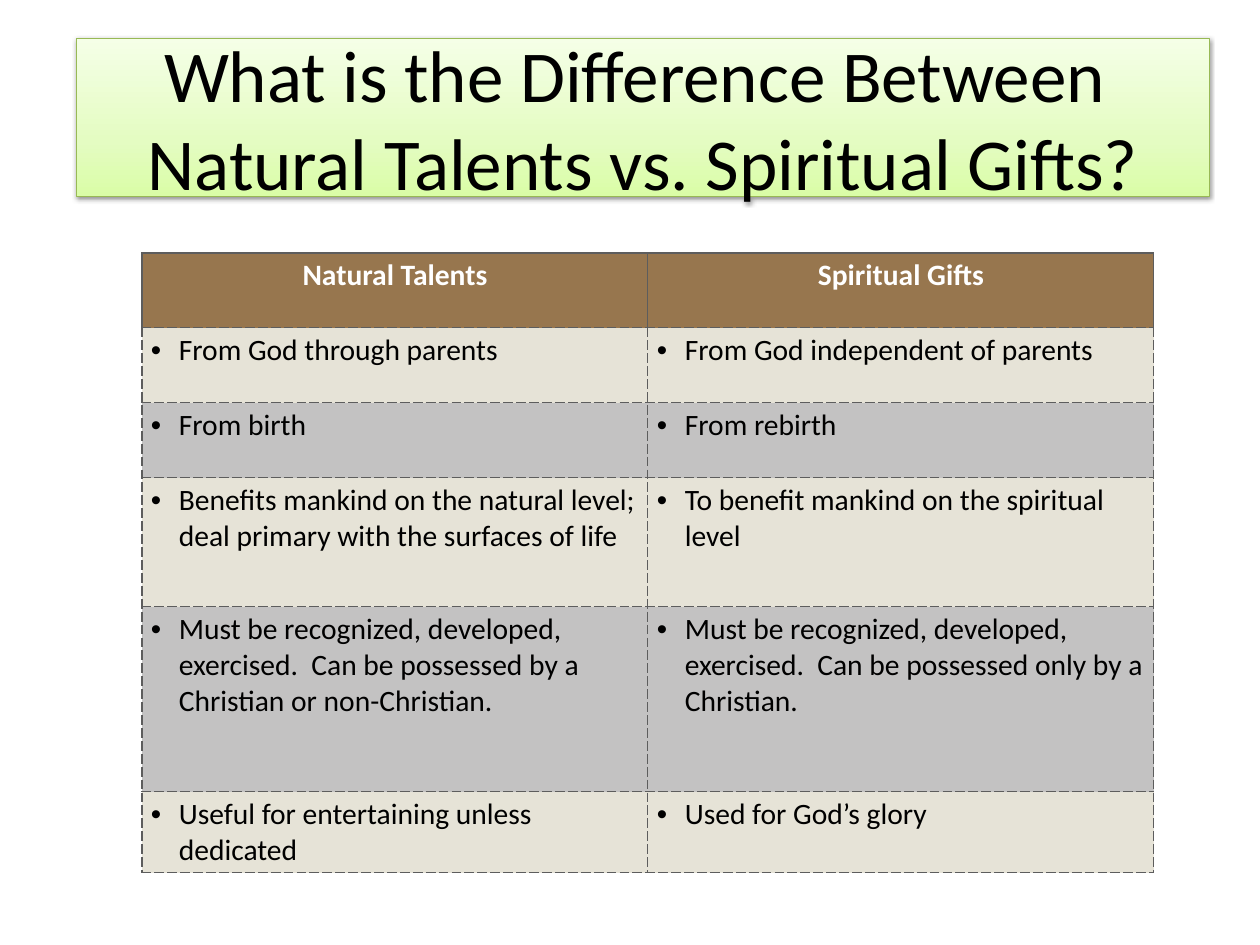
from lxml import etree
from pptx import Presentation
from pptx import util as u
from pptx.dml.color import RGBColor
from pptx.enum import text
from pptx.oxml import parse_xml
from pptx.oxml.ns import nsdecls, qn

EMU_PER_PX = 10321
SLIDE_SIZE = 1260, 945

BLACK = RGBColor(0x00, 0x00, 0x00)
WHITE = RGBColor(0xFF, 0xFF, 0xFF)
LEAF = RGBColor(0x98, 0xB9, 0x55)
BROWN = RGBColor(0x97, 0x76, 0x4E)
SAND = RGBColor(0xE6, 0xE3, 0xD7)
SILVER = RGBColor(0xC3, 0xC2, 0xC2)
BORDER = RGBColor(0x5D, 0x5D, 0x5D)
TITLE_STOPS = [
    (0, RGBColor(0xDA, 0xFD, 0xA7)),
    (35, RGBColor(0xE4, 0xFC, 0xC2)),
    (100, RGBColor(0xF5, 0xFF, 0xE7)),
]

TITLE = "What is the Difference Between \vNatural Talents vs. Spiritual Gifts?"
HEADINGS = "Natural Talents", "Spiritual Gifts"
COMPARISONS = [
    ("From God through parents", "From God independent of parents"),
    ("From birth", "From rebirth"),
    ("Benefits mankind on the natural level; deal primary with the surfaces of life",
     "To benefit mankind on the spiritual level"),
    ("Must be recognized, developed, exercised.  Can be possessed by a "
     "Christian or non-Christian.",
     "Must be recognized, developed, exercised.  Can be possessed only by a Christian."),
    ("Useful for entertaining unless dedicated", "Used for God’s glory"),
]
ROW_HEIGHTS = 75, 75, 75, 129, 185, 81

TITLE_FONT = {"name": "Calibri", "size": u.Pt(59.4), "bold": False}
HEADING_FONT = {"name": "Calibri", "size": u.Pt(24), "bold": True}
BODY_FONT = {**HEADING_FONT, "bold": False}


def px(n):
    return u.Emu(n * EMU_PER_PX)


class Deck:
    """Holds the presentation, its style helpers and the current slide."""

    def __init__(self):
        self.prs = Presentation()
        self.prs.slide_width, self.prs.slide_height = map(px, SLIDE_SIZE)
        self.s = self.prs.slides.add_slide(self.prs.slide_layouts[5])

    def set_text(self, tf, words, font, color, align):
        tf.word_wrap = True
        tf.text = words
        p = tf.paragraphs[0]
        p.alignment = align
        for r in p.runs:
            for key, value in font.items():
                setattr(r.font, key, value)
            r.font.color.rgb = color
        return p

    def title(self, words, left, top, width, height):
        sp = self.s.shapes.title
        sp.left, sp.top, sp.width, sp.height = map(px, (left, top, width, height))
        self.set_text(sp.text_frame, words, TITLE_FONT, BLACK, text.PP_ALIGN.CENTER)
        sp.text_frame.auto_size = text.MSO_AUTO_SIZE.NONE
        sp.text_frame.vertical_anchor = text.MSO_ANCHOR.MIDDLE
        stops = "".join(
            f'<a:gs pos="{pos * 1000}"><a:srgbClr val="{color}"/></a:gs>'
            for pos, color in TITLE_STOPS)
        sp._element.spPr.append(parse_xml(
            f'<a:gradFill {nsdecls("a")} rotWithShape="1"><a:gsLst>{stops}</a:gsLst>'
            '<a:lin ang="16200000" scaled="0"/></a:gradFill>'))
        sp.line.color.rgb = LEAF
        sp.line.width = u.Pt(0.75)
        sp._element.spPr.append(parse_xml(
            f'<a:effectLst {nsdecls("a")}><a:outerShdw blurRad="{u.Pt(3.1)}" '
            f'dist="{u.Pt(1.6)}" dir="5400000" rotWithShape="0"><a:srgbClr val="{BLACK}">'
            '<a:alpha val="38000"/></a:srgbClr></a:outerShdw></a:effectLst>'))

    def bullet(self, p):
        """Give the paragraph a hanging round bullet."""
        pPr = p._p.get_or_add_pPr()
        pPr.set("marL", str(px(28)))
        pPr.set("indent", str(-px(28)))
        etree.SubElement(pPr, qn("a:buFont")).set("typeface", "Arial")
        etree.SubElement(pPr, qn("a:buChar")).set("char", "•")

    def borders(self, cell, dashes):
        """Draw the left, right, top and bottom sides in the given dashes."""
        tcPr = cell._tc.get_or_add_tcPr()
        for side, dash in zip("LRTB", dashes):
            tcPr.append(parse_xml(
                f'<a:ln{side} {nsdecls("a")} w="{u.Pt(1)}"><a:solidFill>'
                f'<a:srgbClr val="{BORDER}"/></a:solidFill>'
                f'<a:prstDash val="{dash}"/></a:ln{side}>'))

    def table(self, rows, left, top, width):
        frame = self.s.shapes.add_table(
            len(rows), len(rows[0]), px(left), px(top), px(width), px(sum(ROW_HEIGHTS)))
        table = frame.table
        table.horz_banding = False
        for i, (row, height) in enumerate(zip(rows, ROW_HEIGHTS)):
            table.rows[i].height = px(height)
            for j, words in enumerate(row):
                cell = table.cell(i, j)
                if i == 0:
                    self.set_text(cell.text_frame, words, HEADING_FONT, WHITE,
                                  text.PP_ALIGN.CENTER)
                    dashes, fill = ["solid"] * 3 + ["lgDash"], BROWN
                else:
                    p = self.set_text(cell.text_frame, words, BODY_FONT, BLACK,
                                      text.PP_ALIGN.LEFT)
                    self.bullet(p)
                    dashes, fill = ["lgDash"] * 4, SAND if i % 2 else SILVER
                self.borders(cell, dashes)
                cell.fill.solid()
                cell.fill.fore_color.rgb = fill


def main():
    deck = Deck()
    deck.title(TITLE, 76, 38, 1134, 158)
    deck.table([HEADINGS, *COMPARISONS], 142, 253, 1012)
    deck.prs.save("out.pptx")


if __name__ == "__main__":
    main()
